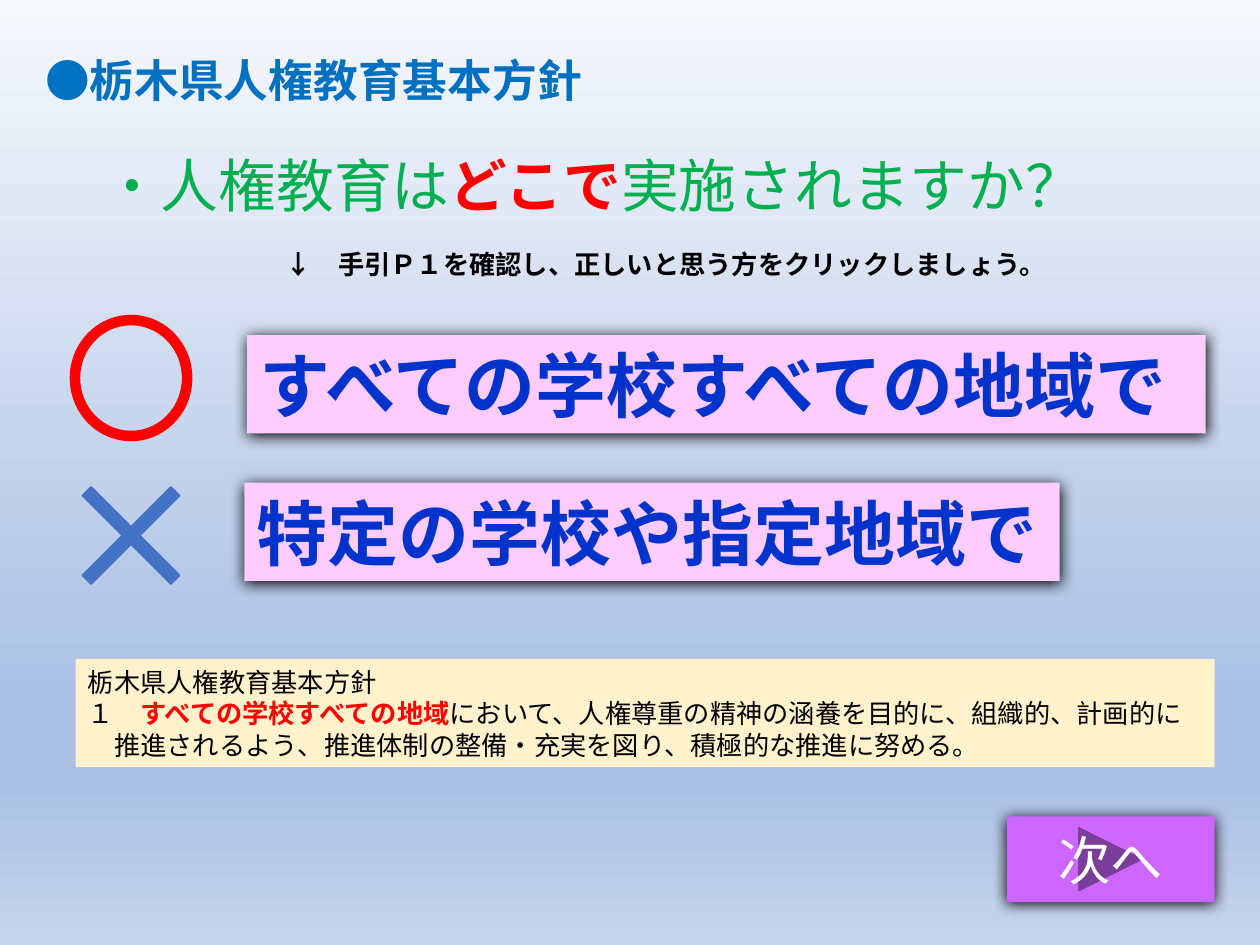
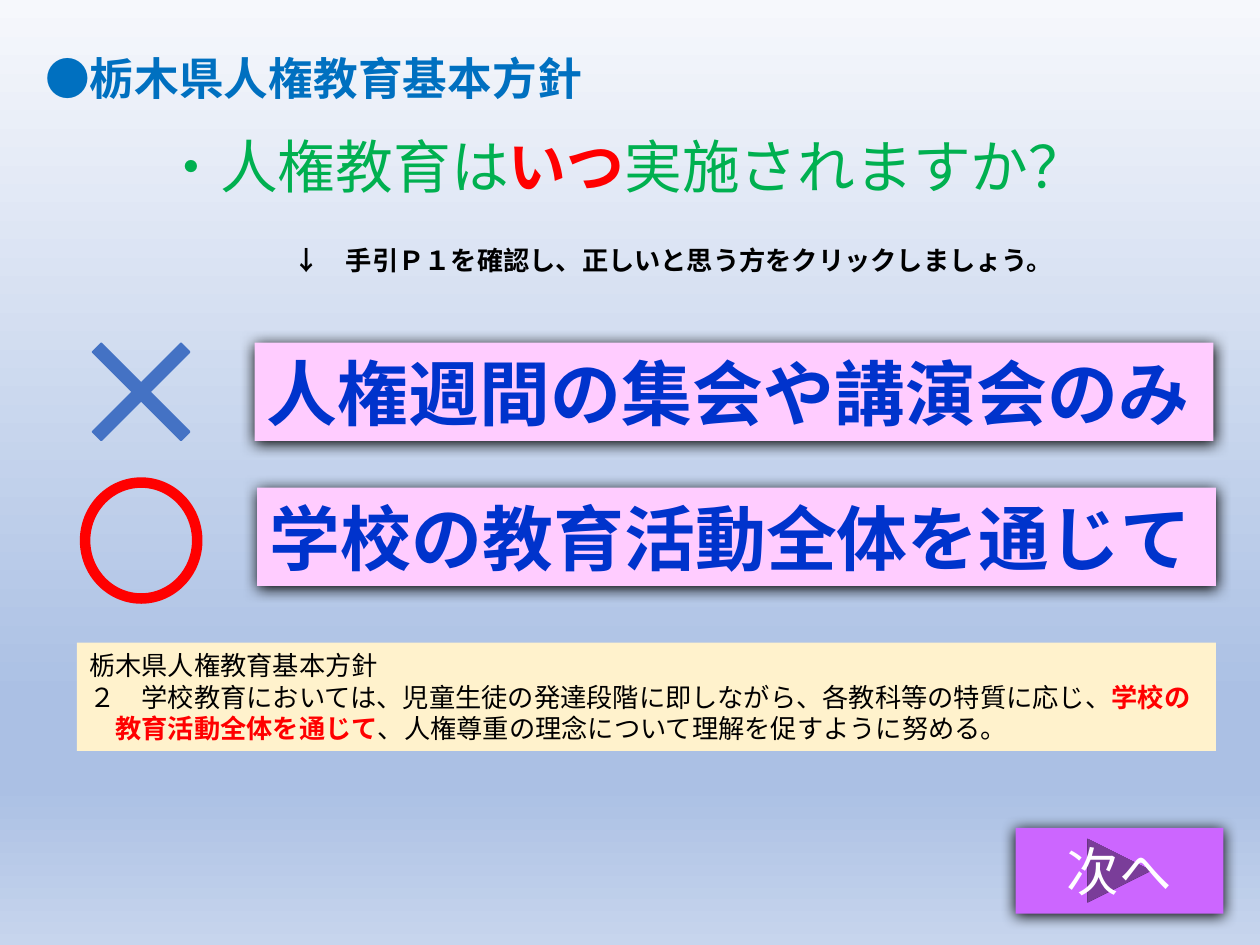
from dataclasses import dataclass

from lxml.etree import SubElement
from pptx import Presentation
from pptx.dml.color import RGBColor
from pptx.enum.shapes import MSO_SHAPE as Preset
from pptx.enum.text import MSO_ANCHOR as Anchor, PP_ALIGN as Align
from pptx.oxml.ns import qn
from pptx.shapes.autoshape import Shape
from pptx.slide import Slide
from pptx.util import Inches, Pt

COLORS = {
    "title": "0070C0", "question": "00B050", "emphasis": "FF0000", "answer": "0033CC",
    "answer_fill": "FFCCFF", "note_fill": "FFF2CC", "button": "CC66FF",
    "cross": "4472C4", "black": "000000", "white": "FFFFFF",
}
BACKGROUND = ((0, "F6F8FC"), (74, "ABC0E4"), (83, "ABC0E4"), (100, "C7D5ED"))
JAPANESE, LATIN = "Noto Sans CJK JP", "Calibri"
POLICY = "栃木県人権教育基本方針"
HINT = "↓　手引Ｐ１を確認し、正しいと思う方をクリックしましょう。"


@dataclass(frozen=True)
class Box:
    left: float
    top: float
    width: float
    height: float

    def lengths(self) -> tuple:
        return tuple(Inches(n) for n in (self.left, self.top, self.width, self.height))


@dataclass(frozen=True)
class TextStyle:
    size: float
    color: str
    bold: bool = False
    font: str = JAPANESE


@dataclass(frozen=True)
class Answer:
    text: str
    box: Box
    correct: bool
    mark_center: tuple[float, float]


@dataclass(frozen=True)
class Quiz:
    title: Box
    question: Box
    question_text: str
    hint: Box
    answers: tuple[Answer, ...]
    note: Box
    note_lines: tuple[str, ...]
    button: Box


TITLE = TextStyle(25.5, "title", True)
QUESTION = TextStyle(33, "question")
HINT_STYLE = TextStyle(15, "black", True)
ANSWER = TextStyle(40.5, "answer", True)
NOTE = TextStyle(15, "black", font=LATIN)
BUTTON = TextStyle(30, "white")

QUIZZES = (
    Quiz(
        title=Box(0.26, 0.42, 4.86, 0.46),
        question=Box(0.72, 1.13, 8.07, 0.66),
        question_text="・人権教育は|どこで|実施されますか？",
        hint=Box(2.17, 1.92, 6.24, 0.35),
        answers=(
            Answer("すべての学校すべての地域で", Box(1.96, 2.66, 7.61, 0.78), True, (1.04, 3)),
            Answer("特定の学校や指定地域で", Box(1.94, 3.83, 6.47, 0.78), False, (1.04, 4.25)),
        ),
        note=Box(0.6, 5.23, 9.04, 0.86),
        note_lines=(
            POLICY,
            "１　|すべての学校すべての地域|において、人権尊重の精神の涵養を目的に、組織的、計画的に",
            "　推進されるよう、推進体制の整備・充実を図り、積極的な推進に努める。",
        ),
        button=Box(7.99, 6.48, 1.65, 0.68),
    ),
    Quiz(
        title=Box(0.26, 0.4, 4.96, 0.46),
        question=Box(1.19, 0.98, 7.61, 0.66),
        question_text="・人権教育は|いつ|実施されますか？",
        hint=Box(2.23, 1.89, 6.24, 0.35),
        answers=(
            Answer("人権週間の集会や講演会のみ", Box(2.02, 2.72, 7.61, 0.78), False, (1.12, 3.11)),
            Answer("学校の教育活動全体を通じて", Box(2.04, 3.87, 7.61, 0.78), True, (1.12, 4.29)),
        ),
        note=Box(0.61, 5.1, 9.04, 0.86),
        note_lines=(
            POLICY,
            "２　学校教育においては、児童生徒の発達段階に即しながら、各教科等の特質に応じ、|学校の",
            "　|教育活動全体を通じて|、人権尊重の理念について理解を促すように努める。",
        ),
        button=Box(8.06, 6.57, 1.65, 0.68),
    ),
)


def rgb(name: str) -> RGBColor:
    return RGBColor.from_string(COLORS[name])


def paint_background(slide: Slide) -> None:
    fill = slide.background.fill
    fill.gradient()
    fill.gradient_angle = 270
    stops = slide.element.xpath(".//a:gsLst")[0]
    for stop in list(stops):
        stops.remove(stop)
    for position, color in BACKGROUND:
        stop = SubElement(stops, qn("a:gs"), pos=str(position * 1000))
        SubElement(stop, qn("a:srgbClr"), val=color)


def write(shape: Shape, lines: tuple[str, ...], style: TextStyle,
          align: Align = Align.LEFT, anchor: Anchor = Anchor.MIDDLE) -> None:
    """Parts between bars are emphasised."""
    frame = shape.text_frame
    frame.word_wrap = True
    frame.vertical_anchor = anchor
    for index, line in enumerate(lines):
        paragraph = frame.paragraphs[0] if index == 0 else frame.add_paragraph()
        paragraph.alignment = align
        for part, text in enumerate(line.split("|")):
            emphasised = part % 2 == 1
            run = paragraph.add_run()
            run.text = text
            run.font.size = Pt(style.size)
            run.font.name = style.font
            run.font.bold = style.bold or emphasised
            run.font.color.rgb = rgb("emphasis" if emphasised else style.color)
            if style.font == JAPANESE:
                SubElement(run.font._element, qn("a:ea"), typeface=JAPANESE)


def add_text(slide: Slide, box: Box, line: str, style: TextStyle) -> Shape:
    shape = slide.shapes.add_textbox(*box.lengths())
    write(shape, (line,), style)
    return shape


def add_preset(slide: Slide, preset: Preset, box: Box, fill: str | None = None,
               line: str | None = None, line_width: float = 1) -> Shape:
    shape = slide.shapes.add_shape(preset, *box.lengths())
    shape.shadow.inherit = False
    if fill:
        shape.fill.solid()
        shape.fill.fore_color.rgb = rgb(fill)
    else:
        shape.fill.background()
    if line:
        shape.line.color.rgb = rgb(line)
        shape.line.width = Pt(line_width)
    else:
        shape.line.fill.background()
    return shape


def add_shadow(shape: Shape) -> None:
    effects = shape._element.spPr.find(qn("a:effectLst"))
    shadow = SubElement(effects, qn("a:outerShdw"), blurRad=str(Pt(8.5)),
                        dist=str(Pt(1)), dir="5400000", algn="t", rotWithShape="0")
    SubElement(shadow, qn("a:srgbClr"), val=COLORS["black"])


def add_mark(slide: Slide, answer: Answer) -> None:
    width, height = (0.89, 0.92) if answer.correct else (1.35, 1.35)
    x, y = answer.mark_center
    box = Box(x - width / 2, y - height / 2, width, height)
    if answer.correct:
        add_preset(slide, Preset.OVAL, box, line="emphasis", line_width=6)
    else:
        cross = add_preset(slide, Preset.MATH_MULTIPLY, box, "cross", "cross")
        cross.adjustments[0] = 0.072


def add_answer(slide: Slide, answer: Answer) -> None:
    panel = add_preset(slide, Preset.RECTANGLE, answer.box, "answer_fill")
    add_shadow(panel)
    write(panel, (answer.text,), ANSWER)
    add_mark(slide, answer)


def add_quiz(presentation: Presentation, quiz: Quiz) -> None:
    slide = presentation.slides.add_slide(presentation.slide_layouts[6])
    paint_background(slide)
    title = add_text(slide, quiz.title, "●" + POLICY, TITLE)
    title.text_frame.vertical_anchor = Anchor.TOP
    title.text_frame.paragraphs[0].line_spacing = 0.9
    add_text(slide, quiz.question, quiz.question_text, QUESTION)
    add_text(slide, quiz.hint, HINT, HINT_STYLE)
    for answer in quiz.answers:
        add_answer(slide, answer)
    note = add_preset(slide, Preset.RECTANGLE, quiz.note, "note_fill")
    write(note, quiz.note_lines, NOTE)
    button = add_preset(slide, Preset.ACTION_BUTTON_FORWARD_OR_NEXT, quiz.button, "button")
    add_shadow(button)
    write(button, ("次へ",), BUTTON, Align.CENTER)


def main() -> None:
    presentation = Presentation()
    presentation.slide_width = Inches(10)
    presentation.slide_height = Inches(7.5)
    for quiz in QUIZZES:
        add_quiz(presentation, quiz)
    presentation.save("out.pptx")


if __name__ == "__main__":
    main()
